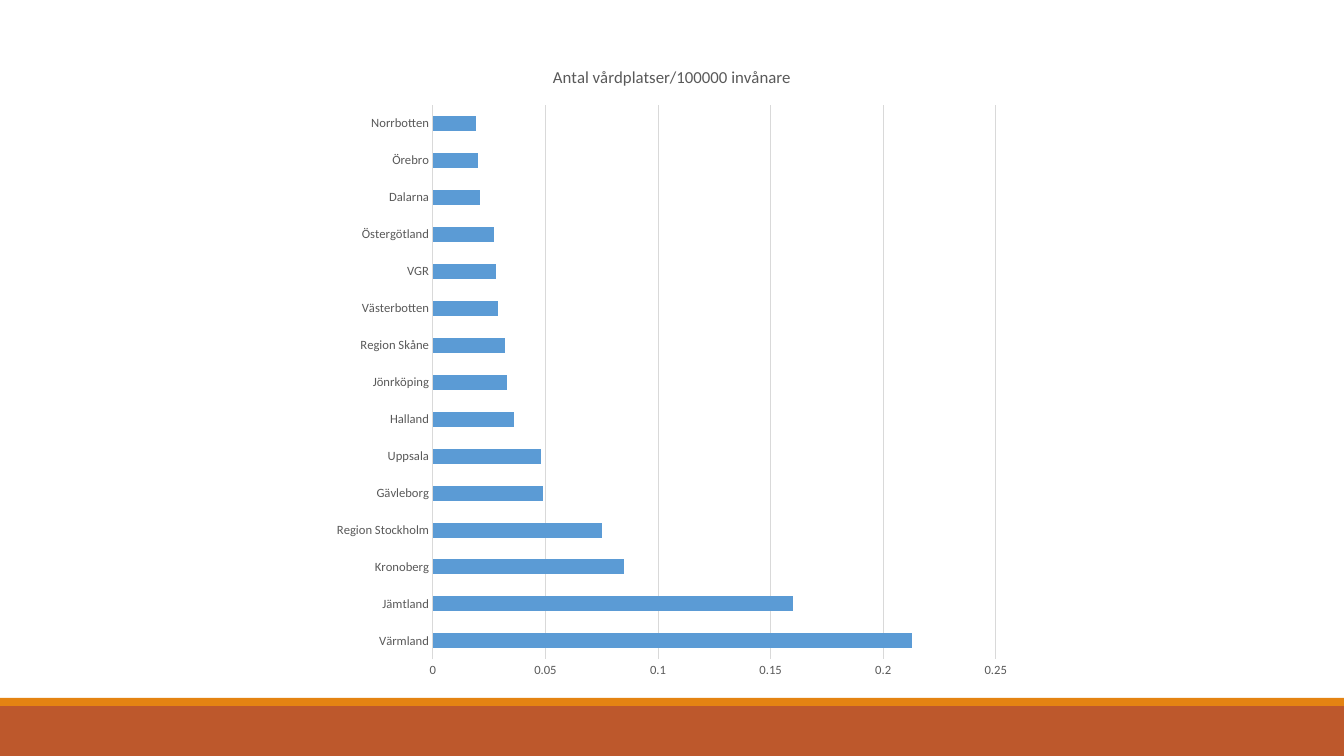
from pptx import Presentation
from pptx.chart.data import CategoryChartData
from pptx.dml.color import RGBColor
from pptx.enum.chart import XL_CHART_TYPE, XL_TICK_MARK
from pptx.enum.shapes import MSO_SHAPE
from pptx.util import Emu, Pt

COLORS = {"rust": "BD582C", "orange": "E48312", "bar": "5B9BD5",
          "text": "595959", "grid": "D9D9D9"}
SCALE = 914400 / 100.8


def px(n):
    return Emu(round(n * SCALE))


def rgb(name):
    return RGBColor.from_string(COLORS[name])


prs = Presentation()
prs.slide_width, prs.slide_height = px(1344), px(756)
s = prs.slides.add_slide(prs.slide_layouts[6])

for top, height, color in [(706, 50, "rust"), (698, 8, "orange")]:
    sp = s.shapes.add_shape(MSO_SHAPE.RECTANGLE, 0, px(top), px(1344), px(height))
    sp.shadow.inherit = False
    sp.fill.solid()
    sp.fill.fore_color.rgb = rgb(color)
    sp.line.fill.background()

beds = {
    "Värmland": 0.213, "Jämtland": 0.16, "Kronoberg": 0.085,
    "Region Stockholm": 0.075, "Gävleborg": 0.049, "Uppsala": 0.048,
    "Halland": 0.036, "Jönrköping": 0.033, "Region Skåne": 0.032,
    "Västerbotten": 0.029, "VGR": 0.028, "Östergötland": 0.027,
    "Dalarna": 0.021, "Örebro": 0.02, "Norrbotten": 0.019,
}
data = CategoryChartData()
data.categories = list(beds)
data.add_series("Series 1", list(beds.values()))
chart = s.shapes.add_chart(XL_CHART_TYPE.BAR_CLUSTERED, px(323), px(44),
                           px(698), px(647), data).chart
chart.has_legend = False
chart.has_title = True
tf = chart.chart_title.text_frame
tf.text = "Antal vårdplatser/100000 invånare"
chart.chart_title.include_in_layout = False

cat, val = chart.category_axis, chart.value_axis
for font, size in [(chart.font, 10), (tf.paragraphs[0].runs[0].font, 12),
                   (cat.tick_labels.font, 9), (val.tick_labels.font, 9)]:
    for key, value in {"name": "Calibri", "size": Pt(size), "bold": False}.items():
        setattr(font, key, value)
    font.color.rgb = rgb("text")

for axis in (cat, val):
    axis.major_tick_mark = axis.minor_tick_mark = XL_TICK_MARK.NONE
for key, value in {"minimum_scale": 0, "maximum_scale": 0.25, "major_unit": 0.05,
                   "has_major_gridlines": True}.items():
    setattr(val, key, value)
val.tick_labels.number_format = "General"
val.tick_labels.number_format_is_linked = False
val.format.line.fill.background()
for line in (cat.format.line, val.major_gridlines.format.line):
    line.color.rgb = rgb("grid")
    line.width = Pt(0.75)

plot = chart.plots[0]
plot.gap_width = 146
plot.vary_by_categories = False
fill = plot.series[0].format.fill
fill.solid()
fill.fore_color.rgb = rgb("bar")

prs.save("out.pptx")
